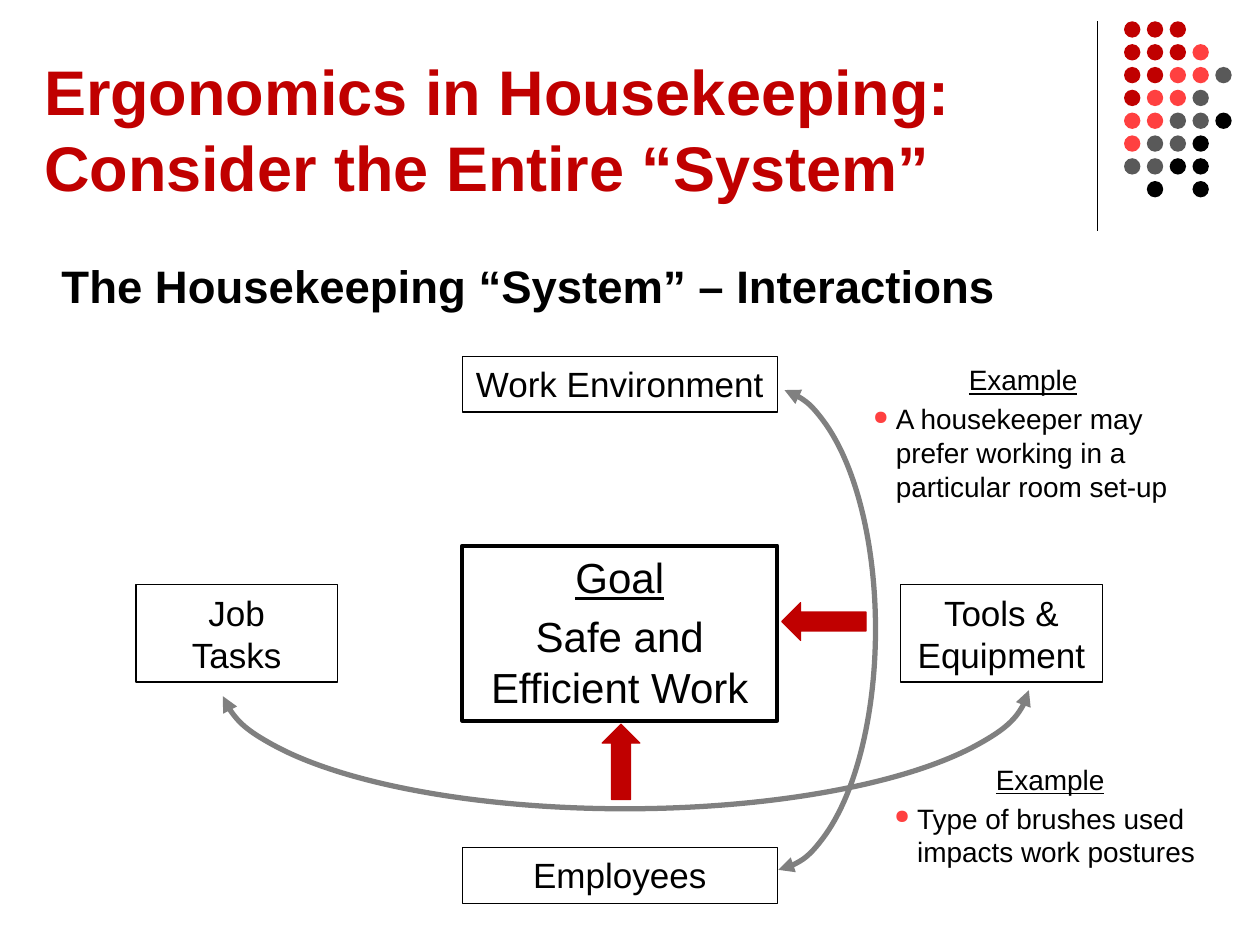
import pptx
import pptx.dml.color
import pptx.enum.shapes
import pptx.enum.text
import pptx.oxml
import pptx.oxml.ns
import pptx.util

Cm = pptx.util.Cm
Pt = pptx.util.Pt
RGBColor = pptx.dml.color.RGBColor
SHAPE = pptx.enum.shapes.MSO_SHAPE
ALIGN = pptx.enum.text.PP_ALIGN
ANCHOR = pptx.enum.text.MSO_ANCHOR
qn = pptx.oxml.ns.qn

BLACK = RGBColor(0x00, 0x00, 0x00)
WHITE = RGBColor(0xFF, 0xFF, 0xFF)
RED = RGBColor(0xC0, 0x00, 0x00)
CORAL = RGBColor(0xFF, 0x40, 0x40)
DARK_GRAY = RGBColor(0x59, 0x59, 0x59)
GRAY = RGBColor(0x80, 0x80, 0x80)

DOT_COLORS = {"R": RED, "C": CORAL, "G": DARK_GRAY, "K": BLACK}
DOT_ROWS = ["RRR", "RRRC", "RRCCG", "RCCG", "CCGGK", "CGGK", "GGKK", " K K"]


class SlideBuilder:
    font = "Arial"

    def __init__(self, slide):
        self.s = slide

    def format(self, p, size, color=BLACK, bold=False, underline=False, align=None):
        p.alignment = align
        p.space_before = Pt(size * 0.2)
        for r in p.runs:
            r.font.name = self.font
            r.font.size = Pt(size)
            r.font.color.rgb = color
            r.font.bold = bold
            r.font.underline = underline

    def shape(self, kind, box, fill=None, line=None, width=0.75, rotation=0):
        sp = self.s.shapes.add_shape(kind, *map(Cm, box))
        sp.shadow.inherit = False
        sp.rotation = rotation
        if fill is None:
            sp.fill.background()
        else:
            sp.fill.solid()
            sp.fill.fore_color.rgb = fill
        if line is None:
            sp.line.fill.background()
        else:
            sp.line.color.rgb = line
            sp.line.width = Pt(width)
        return sp

    def divider(self, x, top, bottom):
        sp = self.s.shapes.add_connector(
            pptx.enum.shapes.MSO_CONNECTOR.STRAIGHT, Cm(x), Cm(top), Cm(x), Cm(bottom))
        sp.line.color.rgb = BLACK
        sp.line.width = Pt(0.75)
        pptx.oxml.ns  # namespace helpers
        sp._element.spPr.append(pptx.oxml.parse_xml(
            '<a:effectLst xmlns:a="http://schemas.openxmlformats.org/drawingml/2006/main"/>'))

    def dots(self, left, top, size, pitch):
        for row, codes in enumerate(DOT_ROWS):
            for col, code in enumerate(codes):
                if code in DOT_COLORS:
                    box = (left + col * pitch, top + row * pitch, size, size)
                    self.shape(SHAPE.OVAL, box, DOT_COLORS[code])

    def text(self, box, text, size, color=BLACK, bold=False, anchor=ANCHOR.TOP):
        tf = self.s.shapes.add_textbox(*map(Cm, box)).text_frame
        tf.word_wrap = True
        tf.vertical_anchor = anchor
        tf.text = text
        self.format(tf.paragraphs[0], size, color, bold)
        return tf

    def box(self, box, text, size=20, fill=None, width=0.75, heading=False):
        tf = self.shape(SHAPE.RECTANGLE, box, fill, BLACK, width).text_frame
        tf.word_wrap = True
        tf.vertical_anchor = ANCHOR.TOP
        tf.text = text
        for i, p in enumerate(tf.paragraphs):
            self.format(p, size, underline=heading and i == 0, align=ALIGN.CENTER)

    def example(self, box, text):
        tf = self.text(box, "Example", 16)
        self.format(tf.paragraphs[0], 16, underline=True, align=ALIGN.CENTER)
        p = tf.add_paragraph()
        p.text = text
        self.format(p, 16)
        pPr = p._p.get_or_add_pPr()
        pPr.set("marL", str(Cm(0.46)))
        pPr.set("indent", str(-Cm(0.46)))
        color = pptx.oxml.ns.qn("a:buClr")
        bu_clr = pPr.makeelement(color, {})
        bu_clr.append(bu_clr.makeelement(qn("a:srgbClr"), {"val": str(CORAL)}))
        pPr.append(bu_clr)
        pPr.append(pPr.makeelement(qn("a:buSzPct"), {"val": "70000"}))
        pPr.append(pPr.makeelement(qn("a:buChar"), {"char": "●"}))

    def curve(self, box, start, end, rotation=0):
        sp = self.shape(SHAPE.ARC, box, None, GRAY, 3, rotation)
        sp.adjustments[0] = start
        sp.adjustments[1] = end
        ln = sp.line._get_or_add_ln()
        for tag in ("a:headEnd", "a:tailEnd"):
            ln.append(ln.makeelement(qn(tag), {"type": "triangle"}))

    def arrow(self, box, rotation=0):
        self.shape(SHAPE.UP_ARROW, box, RED, RED, rotation=rotation)


def main():
    prs = pptx.Presentation()
    prs.slide_width = Cm(25.4)
    prs.slide_height = Cm(19.05)
    b = SlideBuilder(prs.slides.add_slide(prs.slide_layouts[6]))

    b.divider(22.12, 0.43, 4.65)
    b.dots(left=22.66, top=0.43, size=0.33, pitch=0.46)
    b.text((0.64, 0.64, 21.39, 3.6),
           "Ergonomics in Housekeeping: Consider the Entire “System”",
           36, RED, True, ANCHOR.BOTTOM)
    b.text((0.99, 5.08, 23.98, 1.37),
           "The Housekeeping “System” – Interactions", 26, bold=True)

    b.box((9.32, 17.09, 6.35, 1.12), "Employees")
    b.box((9.32, 7.19, 6.35, 1.12), "Work Environment")
    b.box((2.74, 11.79, 4.06, 1.96), "Job\vTasks")
    b.box((18.16, 11.79, 4.06, 1.96), "Tools & Equipment")
    b.box((9.32, 11, 6.35, 3.53), "Goal\nSafe and Efficient Work",
          24, WHITE, 2.25, heading=True)

    b.curve((13.41, 7.82, 4.24, 9.73), 164.03, 52.86)
    b.arrow((16.23, 11.68, 0.76, 1.7), 270)
    b.example((17.35, 7.19, 6.55, 3.12),
              "A housekeeper may prefer working in a particular room set-up")
    b.curve((10.06, 5.61, 5.08, 16.31), 162.63, 52.86, 90)
    b.arrow((12.14, 14.6, 0.76, 1.52))
    b.example((17.78, 15.24, 6.78, 2.44),
              "Type of brushes used impacts work postures")

    prs.save("out.pptx")


if __name__ == "__main__":
    main()
